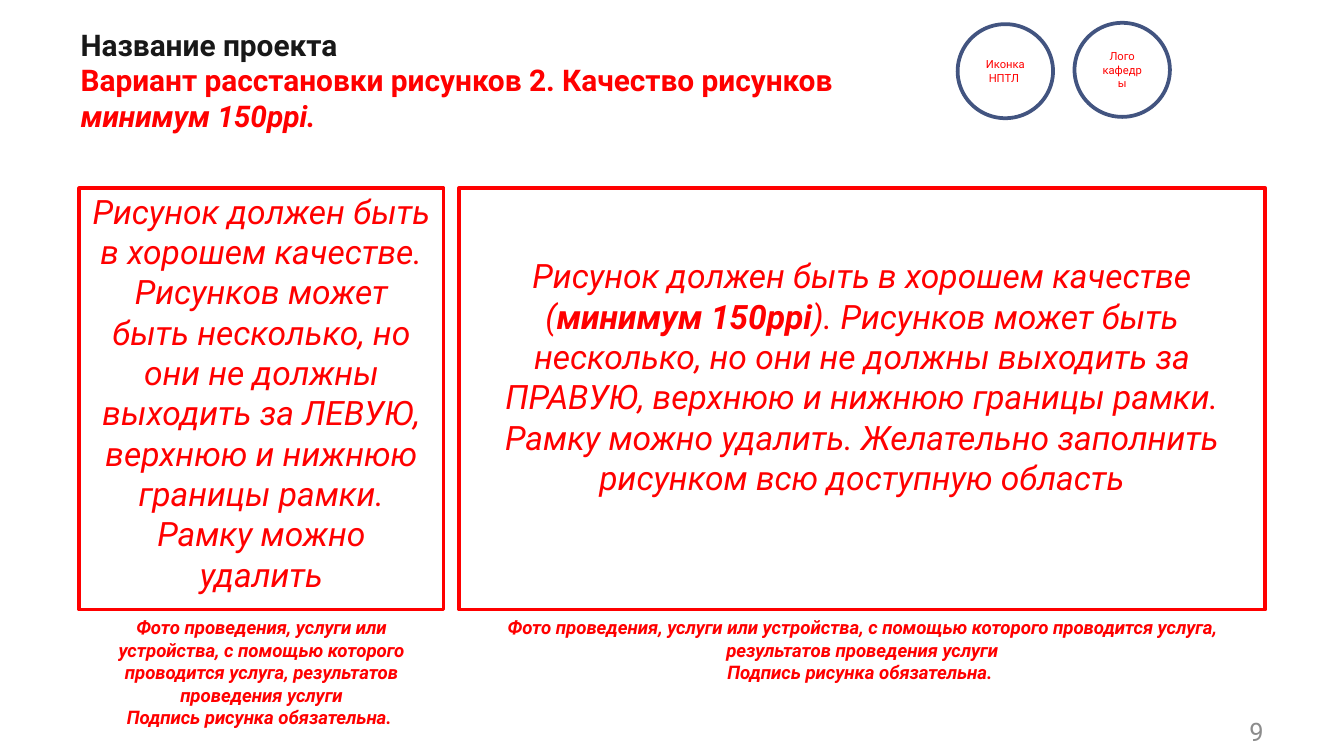
from pptx import Presentation
from pptx.dml.color import RGBColor
from pptx.enum.shapes import MSO_SHAPE
from pptx.enum.text import MSO_ANCHOR, MSO_AUTO_SIZE, PP_ALIGN
from pptx.util import Pt

PX = 4572  # 200 px to the inch
RED = RGBColor(0xFF, 0x00, 0x00)
BLACK = RGBColor(0x18, 0x18, 0x18)
GREY = RGBColor(0x8C, 0x8C, 0x8C)
NAVY = RGBColor(0x42, 0x54, 0x80)
WHITE = RGBColor(0xFF, 0xFF, 0xFF)
FONT = "Roboto"
CAPTION = [
    "Фото проведения, услуги или устройства, с помощью которого "
    "проводится услуга, результатов проведения услуги",
    "Подпись рисунка обязательна. ",
]


def emu(box):
    return [length * PX for length in box]


def add_span(para, text, size, color=RED, bold=False, italic=False):
    span = para.add_run()
    span.text = text
    font = span.font
    font.name, font.size = FONT, Pt(size)
    font.bold, font.italic = bold, italic
    font.color.rgb = color


def write(shape, paras, size, align=PP_ALIGN.CENTER, anchor=MSO_ANCHOR.TOP,
          color=RED, italic=False):
    """Fill a shape with paragraphs, each a list of (text, bold) spans."""
    frame = shape.text_frame
    frame.word_wrap = True
    frame.vertical_anchor = anchor
    for index, spans in enumerate(paras):
        para = frame.add_paragraph() if index else frame.paragraphs[0]
        para.alignment = align
        for text, bold in spans:
            add_span(para, text, size, color, bold, italic)


def add_outlined(page, kind, box, line_color):
    shape = page.shapes.add_shape(kind, *emu(box))
    shape.shadow.inherit = False
    shape.fill.solid()
    shape.fill.fore_color.rgb = WHITE
    shape.line.color.rgb = line_color
    shape.line.width = Pt(2)
    return shape


def add_title(page, box):
    title = page.shapes.title
    title.left, title.top, title.width, title.height = emu(box)
    frame = title.text_frame
    frame.auto_size = MSO_AUTO_SIZE.NONE
    frame.word_wrap = True
    frame.vertical_anchor = MSO_ANCHOR.TOP
    para = frame.paragraphs[0]
    para.alignment = PP_ALIGN.LEFT
    add_span(para, "Название проекта", 16, BLACK, bold=True)
    para.add_line_break()
    add_span(para, "Вариант расстановки рисунков 2. Качество рисунков ", 16, bold=True)
    add_span(para, "минимум 150ppi.", 16, bold=True, italic=True)


def add_badge(page, box, lines):
    badge = add_outlined(page, MSO_SHAPE.OVAL, box, NAVY)
    write(badge, [[(line, False)] for line in lines], 6, anchor=MSO_ANCHOR.MIDDLE)


def add_caption(page, box):
    caption = page.shapes.add_textbox(*emu(box))
    write(caption, [[(line, True)] for line in CAPTION], 10, italic=True)


def add_left_picture(page, box):
    left, top, width, height = box
    add_outlined(page, MSO_SHAPE.RECTANGLE, box, RED)
    hint = page.shapes.add_textbox(*emu((left, top - 6, width, height)))
    write(hint, [[(
        "Рисунок должен быть в хорошем качестве. Рисунков может быть несколько, "
        "но они не должны выходить за ЛЕВУЮ, верхнюю и нижнюю границы рамки. "
        "Рамку можно удалить", False)]], 18, italic=True)
    add_caption(page, (left, top + height, width, 188))


def add_right_picture(page, box):
    left, top, width, height = box
    frame = add_outlined(page, MSO_SHAPE.RECTANGLE, box, RED)
    frame.text_frame.margin_bottom = 77 * PX  # lifts the hint above the middle
    write(frame, [[
        ("Рисунок должен быть в хорошем качестве (", False),
        ("минимум 150ppi", True),
        ("). Рисунков может быть несколько, но они не должны выходить за ПРАВУЮ, "
         "верхнюю и нижнюю границы рамки. Рамку можно удалить. Желательно "
         "заполнить рисунком всю доступную область", False),
    ]], 18, anchor=MSO_ANCHOR.MIDDLE, italic=True)
    add_caption(page, (left, top + height, width, 122))


def add_page_number(page, box):
    number = page.shapes.add_textbox(*emu(box))
    write(number, [[("9", False)]], 13.6, PP_ALIGN.RIGHT, MSO_ANCHOR.MIDDLE, GREY)


def main():
    deck = Presentation()
    deck.slide_width, deck.slide_height = emu((2000, 1125))
    page = deck.slides.add_slide(deck.slide_layouts[5])
    add_title(page, (100, 29, 1294, 202))
    add_left_picture(page, (118, 280, 542, 627))
    add_right_picture(page, (683, 280, 1200, 627))
    add_badge(page, (1425, 36, 142, 140), ["Иконка НПТЛ "])
    add_badge(page, (1599, 34, 142, 140), ["Лого", "кафедры"])
    add_page_number(page, (1788, 1058, 112, 60))
    deck.save("out.pptx")


if __name__ == "__main__":
    main()
